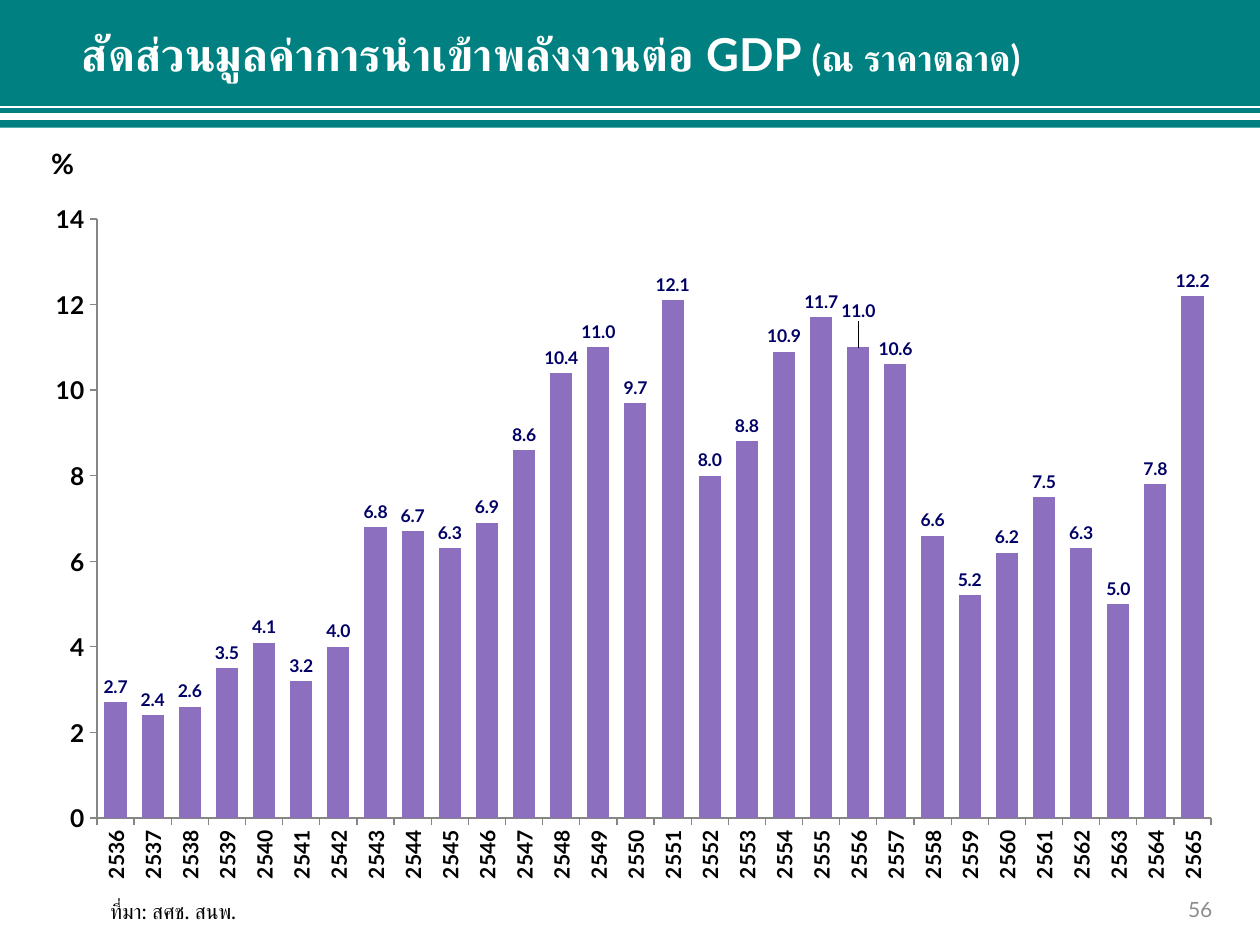
from lxml.etree import SubElement
from pptx import Presentation
from pptx.chart.data import CategoryChartData
from pptx.dml.color import RGBColor
from pptx.enum.chart import XL_CHART_TYPE, XL_LABEL_POSITION, XL_TICK_MARK
from pptx.enum.shapes import MSO_CONNECTOR, MSO_SHAPE
from pptx.enum.text import MSO_ANCHOR, MSO_AUTO_SIZE, PP_ALIGN
from pptx.oxml import parse_xml
from pptx.oxml.ns import nsdecls, qn
from pptx.util import Pt

COLORS = {
    "teal": "008080",
    "white": "FFFFFF",
    "black": "000000",
    "bar": "8C6FBF",
    "value": "000066",
    "axis": "868686",
    "page": "8C8C8C",
}
FONT = "Lato"
FIRST_YEAR = 2536
IMPORT_SHARES = [
    2.7, 2.4, 2.6, 3.5, 4.1, 3.2, 4.0, 6.8, 6.7, 6.3,
    6.9, 8.6, 10.4, 11.0, 9.7, 12.1, 8.0, 8.8, 10.9, 11.7,
    11.0, 10.6, 6.6, 5.2, 6.2, 7.5, 6.3, 5.0, 7.8, 12.2,
]
RAISED_LABEL = 2556 - FIRST_YEAR


def color(key):
    return RGBColor.from_string(COLORS[key])


def style_font(font, size, key, bold=False):
    font.name = FONT
    font.size = Pt(size)
    font.bold = bold
    font.color.rgb = color(key)


def add_run(paragraph, text, size, key, bold=False):
    run = paragraph.add_run()
    run.text = text
    style_font(run.font, size, key, bold)


def add_band(slide):
    band = slide.shapes.add_shape(MSO_SHAPE.RECTANGLE, Pt(-1.5), Pt(-2), Pt(722), Pt(75))
    band.shadow.inherit = False
    band.fill.solid()
    band.fill.fore_color.rgb = color("teal")
    band.line.fill.background()


def add_stripe(slide, y, width):
    stripe = slide.shapes.add_connector(MSO_CONNECTOR.STRAIGHT, Pt(-1), Pt(y), Pt(720), Pt(y))
    stripe.line.color.rgb = color("white")
    stripe.line.width = Pt(width)
    SubElement(stripe._element.spPr, qn("a:effectLst"))


def fill_title(title):
    title.left, title.top, title.width, title.height = Pt(39.6), Pt(0), Pt(666), Pt(60.5)
    frame = title.text_frame
    frame.auto_size = MSO_AUTO_SIZE.NONE
    frame.vertical_anchor = MSO_ANCHOR.MIDDLE
    heading = frame.paragraphs[0]
    heading.alignment = PP_ALIGN.LEFT
    add_run(heading, "สัดส่วนมูลค่าการนำเข้าพลังงานต่อ GDP ", 25.9, "white", True)
    add_run(heading, "(ณ ราคาตลาด)", 20.4, "white", True)


def add_note(slide, box, text, size, key, align, bold=False, wrap=True,
             anchor=MSO_ANCHOR.TOP):
    note = slide.shapes.add_textbox(*(Pt(length) for length in box))
    frame = note.text_frame
    frame.word_wrap = wrap
    frame.vertical_anchor = anchor
    frame.paragraphs[0].alignment = align
    add_run(frame.paragraphs[0], text, size, key, bold)


def style_axis(axis, size):
    axis.has_major_gridlines = False
    axis.major_tick_mark = XL_TICK_MARK.OUTSIDE
    axis.minor_tick_mark = XL_TICK_MARK.NONE
    axis.format.line.color.rgb = color("axis")
    axis.format.line.width = Pt(0.75)
    style_font(axis.tick_labels.font, size, "black", True)


def manual_layout(settings):
    items = "".join(f'<c:{tag} val="{value}"/>' for tag, value in settings.items())
    return parse_xml(
        f'<c:layout {nsdecls("c")}><c:manualLayout>{items}</c:manualLayout></c:layout>')


def raise_label(series, index):
    """Lift one value label clear of its taller neighbour."""
    label = series.points[index].data_label
    style_font(label.font, 10, "value", True)
    label.position = XL_LABEL_POSITION.OUTSIDE_END
    node = series._element.find(qn("c:dLbls")).find(qn("c:dLbl"))
    number_format = parse_xml(
        f'<c:numFmt {nsdecls("c")} formatCode="#,##0.0" sourceLinked="0"/>')
    node.insert(1, manual_layout({"x": 0, "y": -0.03}))
    node.insert(2, number_format)


def add_share_chart(slide):
    data = CategoryChartData(number_format="#,##0.0")
    data.categories = [str(FIRST_YEAR + i) for i in range(len(IMPORT_SHARES))]
    data.add_series("Series 1", IMPORT_SHARES)
    chart = slide.shapes.add_chart(
        XL_CHART_TYPE.COLUMN_CLUSTERED, Pt(18), Pt(108), Pt(687.6), Pt(401.8), data).chart
    chart.has_legend = False
    chart.has_title = False
    chart.font.name = "Calibri"
    chart.font.size = Pt(18)
    chart.font.color.rgb = color("black")

    # Axes
    years, percent = chart.category_axis, chart.value_axis
    style_axis(years, 12)
    years.tick_labels._element.find(qn("c:txPr")).find(qn("a:bodyPr")).set("rot", "-5400000")
    style_axis(percent, 14)
    percent.minimum_scale, percent.maximum_scale, percent.major_unit = 0, 14, 2
    percent.tick_labels.number_format = "#,##0"
    percent.tick_labels.number_format_is_linked = False

    # Columns and their values
    plot = chart.plots[0]
    plot.gap_width = 68
    plot.vary_by_categories = False
    series = plot.series[0]
    series.format.fill.solid()
    series.format.fill.fore_color.rgb = color("bar")
    labels = series.data_labels
    labels.show_value = True
    labels.number_format = "#,##0.0"
    labels.number_format_is_linked = False
    labels.position = XL_LABEL_POSITION.OUTSIDE_END
    style_font(labels.font, 10, "value", True)
    raise_label(series, RAISED_LABEL)

    # Plot area
    area = chart._chartSpace.chart.plotArea
    for old in area.findall(qn("c:layout")):
        area.remove(old)
    area.insert(0, manual_layout({
        "layoutTarget": "inner", "xMode": "edge", "yMode": "edge",
        "x": 0.0544, "y": 0.0427, "w": 0.926, "h": 0.852}))


def main():
    deck = Presentation()
    deck.slide_width, deck.slide_height = Pt(720), Pt(540)
    slide = deck.slides.add_slide(deck.slide_layouts[5])

    # Header
    add_band(slide)
    add_stripe(slide, 66.5, 3.75)
    add_stripe(slide, 61.2, 1.25)
    title = slide.shapes.title
    fill_title(title)
    slide.shapes._spTree.append(title._element)

    # Chart with its unit
    add_share_chart(slide)
    add_note(slide, (5.8, 80, 60, 26.6), "%", 16, "black", PP_ALIGN.CENTER, bold=True)

    # Footer
    add_note(slide, (48.2, 509.8, 101.5, 21.6), "ที่มา: สศช. สนพ.", 12, "black",
             PP_ALIGN.CENTER, wrap=False)
    add_note(slide, (661.7, 506.2, 38.2, 26.6), "56", 12, "page", PP_ALIGN.RIGHT,
             anchor=MSO_ANCHOR.MIDDLE)

    deck.save("out.pptx")


if __name__ == "__main__":
    main()
